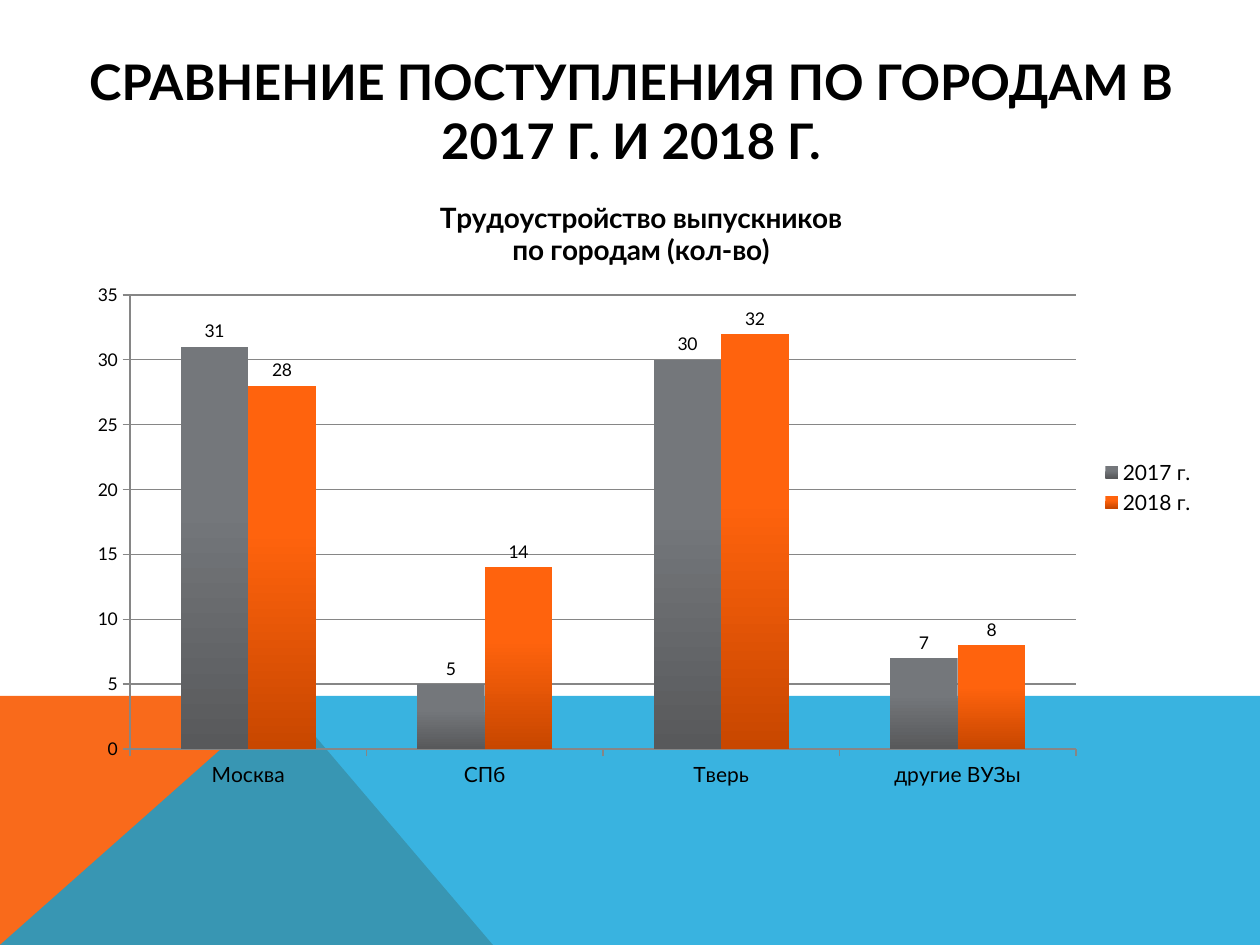
from dataclasses import dataclass

from lxml.etree import SubElement
from pptx import Presentation
from pptx.chart.data import CategoryChartData
from pptx.dml.color import RGBColor
from pptx.enum.chart import XL_CHART_TYPE, XL_LABEL_POSITION, XL_LEGEND_POSITION, XL_TICK_MARK
from pptx.enum.text import MSO_ANCHOR, PP_ALIGN
from pptx.oxml import parse_xml
from pptx.oxml.ns import nsdecls, qn
from pptx.util import Emu, Pt


@dataclass(frozen=True)
class Theme:
    font: str = "Lato"
    ink: str = "000000"
    orange: str = "F96A1B"
    blue: str = "08A1D9"
    grid: str = "868686"
    bars: tuple = (("74777B", "58595B"), ("FF630D", "C84700"))
    title_size: int = 28
    chart_title_size: int = 16
    legend_size: int = 12
    label_size: int = 10


def px(length):
    return Emu(round(length * 914400 / 126))


def color(value):
    return RGBColor.from_string(value)


def style_font(font, theme, size, bold=False):
    font.name = theme.font
    font.size = Pt(size)
    font.bold = bold
    font.color.rgb = color(theme.ink)


def write_text(frame, text, *, theme, size, bold=False, align=PP_ALIGN.CENTER):
    for index, line in enumerate(text.split("\n")):
        para = frame.add_paragraph() if index else frame.paragraphs[0]
        para.alignment = align
        span = para.add_run()
        span.text = line
        style_font(span.font, theme, size, bold)


class SlideBuilder:
    def __init__(self, slide, theme):
        self.slide = slide
        self.theme = theme

    def polygon(self, points, fill, opacity=100):
        builder = self.slide.shapes.build_freeform(*map(px, points[0]))
        builder.add_line_segments([tuple(map(px, point)) for point in points[1:]])
        shape = builder.convert_to_shape()
        shape.shadow.inherit = False
        shape.line.fill.background()
        shape.fill.solid()
        shape.fill.fore_color.rgb = color(fill)
        if opacity < 100:
            tint = shape.fill._xPr.find(".//" + qn("a:srgbClr"))
            SubElement(tint, qn("a:alpha"), val=str(opacity * 1000))

    def title(self, text, left, top, width, height):
        box = self.slide.shapes.add_textbox(*map(px, (left, top, width, height)))
        frame = box.text_frame
        frame.word_wrap = True
        frame.vertical_anchor = MSO_ANCHOR.MIDDLE
        write_text(frame, text, theme=self.theme, size=self.theme.title_size, bold=True)

    def column_chart(self, title, categories, series, area, plot):
        theme = self.theme
        data = CategoryChartData()
        data.categories = categories
        for name, values in series.items():
            data.add_series(name, values)
        frame = self.slide.shapes.add_chart(
            XL_CHART_TYPE.COLUMN_CLUSTERED, *map(px, area), data)
        chart = frame.chart
        style_font(chart.font, theme, theme.label_size)
        chart.has_title = True
        write_text(chart.chart_title.text_frame, title, theme=theme,
                   size=theme.chart_title_size, bold=True)
        chart.has_legend = True
        chart.legend.position = XL_LEGEND_POSITION.RIGHT
        chart.legend.include_in_layout = False
        style_font(chart.legend.font, theme, theme.legend_size)
        self.axes(chart)
        self.columns(chart.plots[0])
        self.plot_layout(chart, area, plot)

    def axes(self, chart):
        theme = self.theme
        sizes = (theme.legend_size, theme.label_size)
        for axis, size in zip((chart.category_axis, chart.value_axis), sizes):
            axis.major_tick_mark = XL_TICK_MARK.OUTSIDE
            axis.minor_tick_mark = XL_TICK_MARK.NONE
            axis.format.line.color.rgb = color(theme.grid)
            style_font(axis.tick_labels.font, theme, size)
        values = chart.value_axis
        values.minimum_scale, values.maximum_scale, values.major_unit = 0, 35, 5
        values.has_major_gridlines = True
        values.major_gridlines.format.line.color.rgb = color(theme.grid)

    def columns(self, plot):
        plot.gap_width = 150
        plot.overlap = 0
        plot.vary_by_categories = False
        for series, shades in zip(plot.series, self.theme.bars):
            fill = series.format.fill
            fill.gradient()
            fill.gradient_angle = 270
            for stop, shade, position in zip(fill.gradient_stops, shades, (0.4, 1)):
                stop.color.rgb = color(shade)
                stop.position = position
            labels = series.data_labels
            labels.show_value = True
            labels.position = XL_LABEL_POSITION.OUTSIDE_END
            style_font(labels.font, self.theme, self.theme.label_size)

    def plot_layout(self, chart, area, plot):
        left, top, width, height = area
        plot_left, plot_top, plot_width, plot_height = plot
        shares = {"x": (plot_left - left) / width, "y": (plot_top - top) / height,
                  "w": plot_width / width, "h": plot_height / height}
        modes = "".join(f'<c:{key}Mode val="edge"/>' for key in "xy")
        parts = "".join(f'<c:{key} val="{share:.4f}"/>' for key, share in shares.items())
        layout = parse_xml(
            f'<c:layout {nsdecls("c")}><c:manualLayout><c:layoutTarget val="inner"/>'
            f'{modes}{parts}</c:manualLayout></c:layout>')
        plot_area = chart._chartSpace.find(".//" + qn("c:plotArea"))
        for old in plot_area.findall(qn("c:layout")):
            plot_area.remove(old)
        plot_area.insert(0, layout)


def main():
    deck = Presentation()
    deck.slide_width, deck.slide_height = px(1260), px(945)
    theme = Theme()
    page = SlideBuilder(deck.slides.add_slide(deck.slide_layouts[6]), theme)
    page.polygon([(0, 945), (0, 696), (281, 696), (493, 945)], theme.orange)
    page.polygon([(0, 945), (281, 696), (1260, 696), (1260, 945)], theme.blue, opacity=80)
    page.title("СРАВНЕНИЕ ПОСТУПЛЕНИЯ ПО ГОРОДАМ В 2017 Г. И 2018 Г.", 64, 37, 1134, 147)
    page.column_chart(
        "Трудоустройство выпускников\nпо городам (кол-во)",
        ["Москва", "СПб", "Тверь", "другие ВУЗы"],
        {"2017 г.": (31, 5, 30, 7), "2018 г.": (28, 14, 32, 8)},
        area=(74, 175, 1134, 624),
        plot=(130, 295, 946, 454),
    )
    deck.save("out.pptx")


if __name__ == "__main__":
    main()
